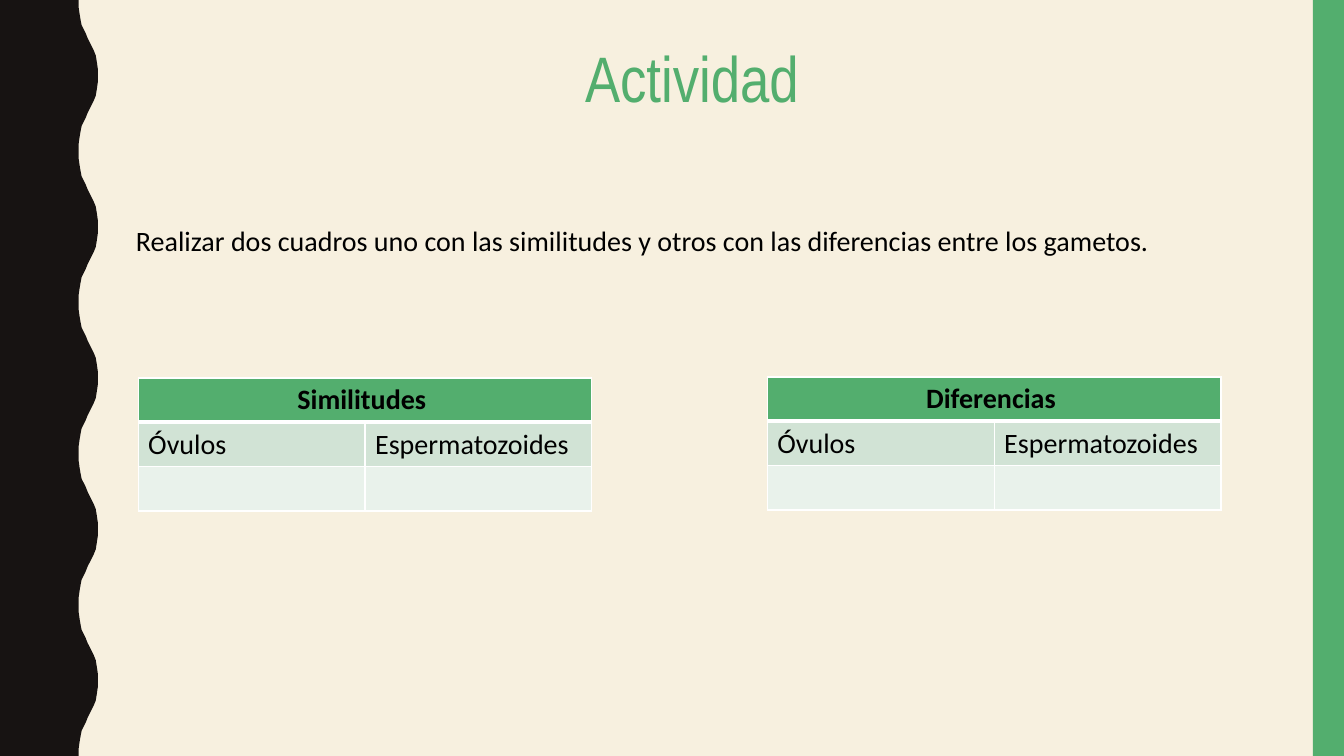
import pptx
import pptx.util
import pptx.dml.color
import pptx.enum.shapes
import pptx.enum.text
import pptx.oxml
import pptx.oxml.ns

Inches, Pt = pptx.util.Inches, pptx.util.Pt
RGBColor = pptx.dml.color.RGBColor
ALIGN = pptx.enum.text.PP_ALIGN

CREAM = RGBColor(0xF7, 0xF0, 0xDF)
DARK = RGBColor(0x17, 0x13, 0x12)
GREEN = RGBColor(0x53, 0xAE, 0x6E)
PALE_GREEN = RGBColor(0xD1, 0xE3, 0xD5)
PALEST_GREEN = RGBColor(0xE9, 0xF2, 0xEB)
BLACK = RGBColor(0, 0, 0)

TITLE = "Actividad "
INSTRUCTION = ("Realizar dos cuadros uno con las similitudes y otros con las "
               "diferencias entre los gametos.  ")
GAMETES = ["Óvulos", "Espermatozoides"]
COMPARISONS = [("Similitudes ", 1.37, 3.75), ("Diferencias ", 7.61, 3.74)]
ROW_FILLS = [GREEN, PALE_GREEN, PALEST_GREEN]
COLUMN_WIDTH, ROW_HEIGHT = 2.25, 0.44

WIDTH, HEIGHT = 13.33, 7.5
WAVE_PERIOD, WAVE_COUNT = 1.5, 5
HALF_WAVE = [(0.78, 0), (0.78, 0.07), (0.79, 0.14), (0.8, 0.2), (0.81, 0.25),
             (0.83, 0.29), (0.85, 0.33), (0.87, 0.38), (0.89, 0.42),
             (0.91, 0.46), (0.93, 0.5), (0.95, 0.55), (0.96, 0.61),
             (0.97, 0.68), (0.97, 0.75)]


def paint(shape, color):
    shape.shadow.inherit = False
    shape.fill.solid()
    shape.fill.fore_color.rgb = color
    shape.line.fill.background()


def write(paragraph, text, size, font, color, align, bold=False):
    paragraph.alignment = align
    run = paragraph.add_run()
    run.text = text
    run.font.size = Pt(size)
    run.font.name = font
    run.font.color.rgb = color
    run.font.bold = bold


def add_text(slide, left, top, width, height):
    frame = slide.shapes.add_textbox(
        Inches(left), Inches(top), Inches(width), Inches(height)).text_frame
    frame.word_wrap = True
    return frame.paragraphs[0]


def set_borders(cell, bottom):
    properties = cell._tc.get_or_add_tcPr()
    sides = [("lnL", 1), ("lnR", 1), ("lnT", 1), ("lnB", bottom)]
    for position, (side, points) in enumerate(sides):
        properties.insert(position, pptx.oxml.parse_xml(
            f'<a:{side} {pptx.oxml.ns.nsdecls("a")} w="{Pt(points)}">'
            '<a:solidFill><a:srgbClr val="FFFFFF"/></a:solidFill>'
            f'</a:{side}>'))


def add_comparison(slide, heading, left, top):
    rows = [[heading, ""], GAMETES, ["", ""]]
    table = slide.shapes.add_table(
        len(rows), len(GAMETES), Inches(left), Inches(top),
        Inches(COLUMN_WIDTH * len(GAMETES)),
        Inches(ROW_HEIGHT * len(rows))).table
    table.cell(0, 0).merge(table.cell(0, 1))
    for r, texts in enumerate(rows):
        table.rows[r].height = Inches(ROW_HEIGHT)
        is_heading = r == 0
        for c, text in enumerate(texts):
            cell = table.cell(r, c)
            cell.fill.solid()
            cell.fill.fore_color.rgb = ROW_FILLS[r]
            set_borders(cell, 3 if is_heading else 1)
            if text:
                write(cell.text_frame.paragraphs[0], text, 20, "Calibri", BLACK,
                      ALIGN.CENTER if is_heading else ALIGN.LEFT, is_heading)


def add_wave(slide):
    full_wave = HALF_WAVE + [(x, WAVE_PERIOD - y) for x, y in HALF_WAVE[-2::-1]]
    edge = [(x, y + n * WAVE_PERIOD)
            for n in range(WAVE_COUNT) for x, y in full_wave]
    outline = [(Inches(x), Inches(y)) for x, y in edge + [(0, HEIGHT)]]
    builder = slide.shapes.build_freeform(0, 0)
    builder.add_line_segments(outline, close=True)
    paint(builder.convert_to_shape(), DARK)


def main():
    deck = pptx.Presentation()
    deck.slide_width, deck.slide_height = Inches(WIDTH), Inches(HEIGHT)
    slide = deck.slides.add_slide(deck.slide_layouts[6])
    slide.background.fill.solid()
    slide.background.fill.fore_color.rgb = CREAM

    add_wave(slide)
    side_band = slide.shapes.add_shape(
        pptx.enum.shapes.MSO_SHAPE.RECTANGLE,
        Inches(13.02), 0, Inches(0.31), Inches(HEIGHT))
    paint(side_band, GREEN)

    title = add_text(slide, 1.37, 0.42, 11.13, 1.04)
    title.line_spacing = 0.9
    write(title, TITLE, 45.9, "Arial Narrow", GREEN, ALIGN.CENTER)
    title.add_line_break()

    for heading, left, top in COMPARISONS:
        add_comparison(slide, heading, left, top)

    instruction = add_text(slide, 1.25, 2.13, 11.37, 0.59)
    instruction.line_spacing = 1.1
    instruction.space_before = Pt(7)
    write(instruction, INSTRUCTION, 20, "Calibri", BLACK, ALIGN.JUSTIFY)

    deck.save("out.pptx")


if __name__ == "__main__":
    main()
